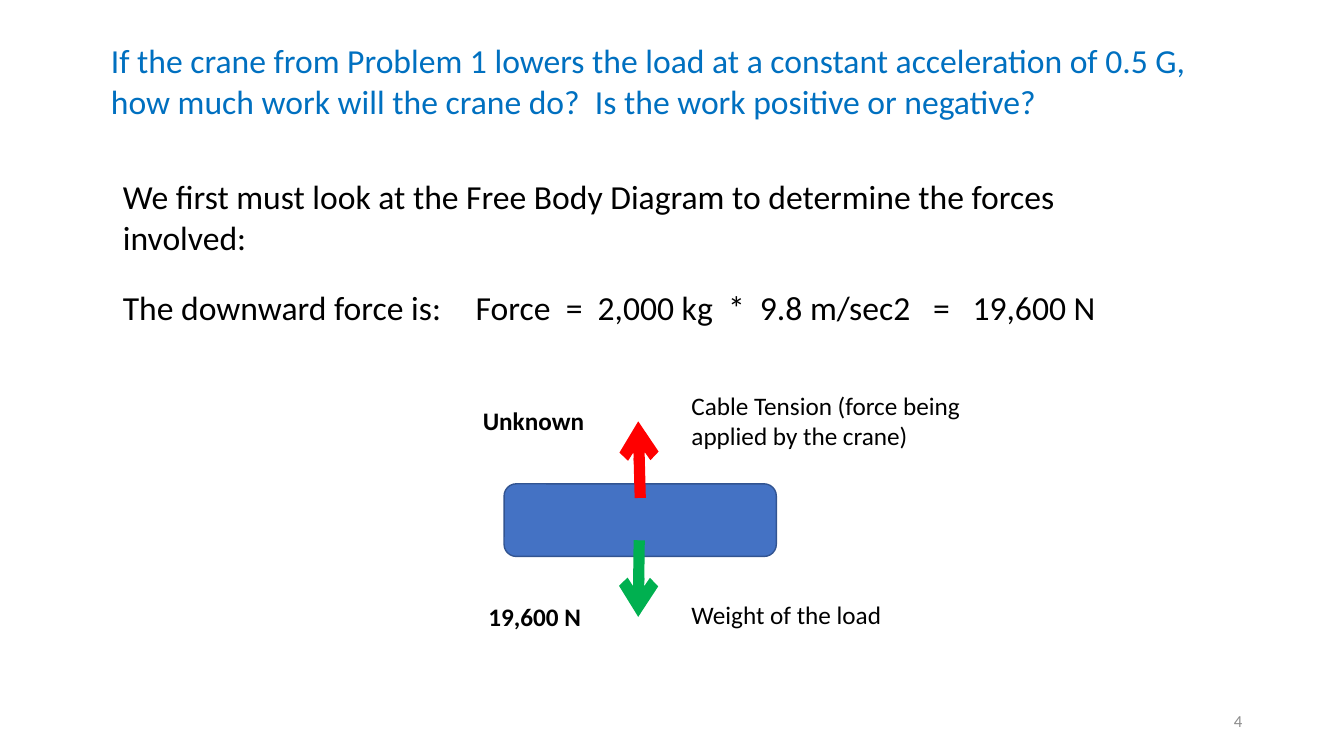
from lxml import etree
from pptx import Presentation
from pptx import util as u
from pptx.dml.color import RGBColor
from pptx.enum import shapes, text
from pptx.oxml.ns import qn

PX = 9144
FONT = "Calibri"


def px(length):
    """Turn px into EMU."""
    return u.Emu(length * PX)


def rgb(code):
    """Turn a hex string into a colour."""
    return RGBColor.from_string(code)


def write(holder, words, size=24, color="000000", bold=False,
          align=text.PP_ALIGN.LEFT, anchor=text.MSO_ANCHOR.TOP):
    """Put formatted text into a shape."""
    frame = holder.text_frame
    frame.word_wrap = True
    frame.auto_size = text.MSO_AUTO_SIZE.NONE
    frame.vertical_anchor = anchor
    line = frame.paragraphs[0]
    line.alignment = align
    run = line.add_run()
    run.text = words
    run.font.name = FONT
    run.font.size = u.Pt(size)
    run.font.bold = bold
    run.font.color.rgb = rgb(color)


def label(slide, box, words, **style):
    """Add a text box."""
    write(slide.shapes.add_textbox(*map(px, box)), words, **style)


def force_arrow(slide, start, end, color):
    """Draw a thick arrow from start to end."""
    force = slide.shapes.add_connector(
        shapes.MSO_CONNECTOR.STRAIGHT, *map(px, start + end))
    force.line.color.rgb = rgb(color)
    force.line.width = u.Pt(8)
    etree.SubElement(force.line._get_or_add_ln(), qn("a:tailEnd"), type="arrow")
    etree.SubElement(force._element.spPr, qn("a:effectLst"))


def question(slide, box):
    """Place the problem statement as the title."""
    title = slide.shapes.title
    title.left, title.top, title.width, title.height = map(px, box)
    write(title, "If the crane from Problem 1 lowers the load at a constant "
                 "acceleration of 0.5 G, how much work will the crane do?  "
                 "Is the work positive or negative?", color="0070C0")


def explanation(slide, box):
    """Place the introduction and the force equation."""
    left, top, width, height = box
    label(slide, (left, top, 1069, 91),
          "We first must look at the Free Body Diagram to determine "
          "the forces involved:")
    label(slide, (left, top + height - 50, width, 50),
          "The downward force is:\tForce  =  2,000 kg  *  9.8 m/sec2   =   "
          "19,600 N")


def free_body_diagram(slide, box):
    """Draw the load, its two forces and their labels."""
    left, top, width, height = box
    load = slide.shapes.add_shape(
        shapes.MSO_SHAPE.ROUNDED_RECTANGLE,
        *map(px, (left + 31, top + 98, 270, 72)))
    load.shadow.inherit = False
    load.fill.solid()
    load.fill.fore_color.rgb = rgb("4472C4")
    load.line.color.rgb = rgb("325491")
    load.line.width = u.Pt(1)

    tip = left + 164
    force_arrow(slide, (tip + 2, top + 112), (tip, top + 36), "FF0000")
    force_arrow(slide, (tip + 1, top + 154), (tip, top + 230), "00B050")

    names = left + width - 290
    label(slide, (names, top, 290, 71),
          "Cable Tension (force being applied by the crane)", size=18)
    label(slide, (names, top + height - 42, 290, 40),
          "Weight of the load", size=18)
    for offset, amount in ((15, "Unknown"), (height - 40, " 19,600 N")):
        label(slide, (left, top + offset, 143, 40), amount, size=18, bold=True)


def page_number(slide, box):
    """Place the page number."""
    label(slide, box, "4", size=12, color="8C8C8C",
          align=text.PP_ALIGN.RIGHT, anchor=text.MSO_ANCHOR.MIDDLE)


def main():
    """Build and save the slide."""
    deck = Presentation()
    deck.slide_width, deck.slide_height = px(1333), px(750)
    slide = deck.slides.add_slide(deck.slide_layouts[5])
    question(slide, (100, 35, 1092, 91))
    explanation(slide, (112, 170, 1122, 160))
    free_body_diagram(slide, (469, 382, 497, 250))
    page_number(slide, (942, 695, 300, 40))
    deck.save("out.pptx")


if __name__ == "__main__":
    main()
